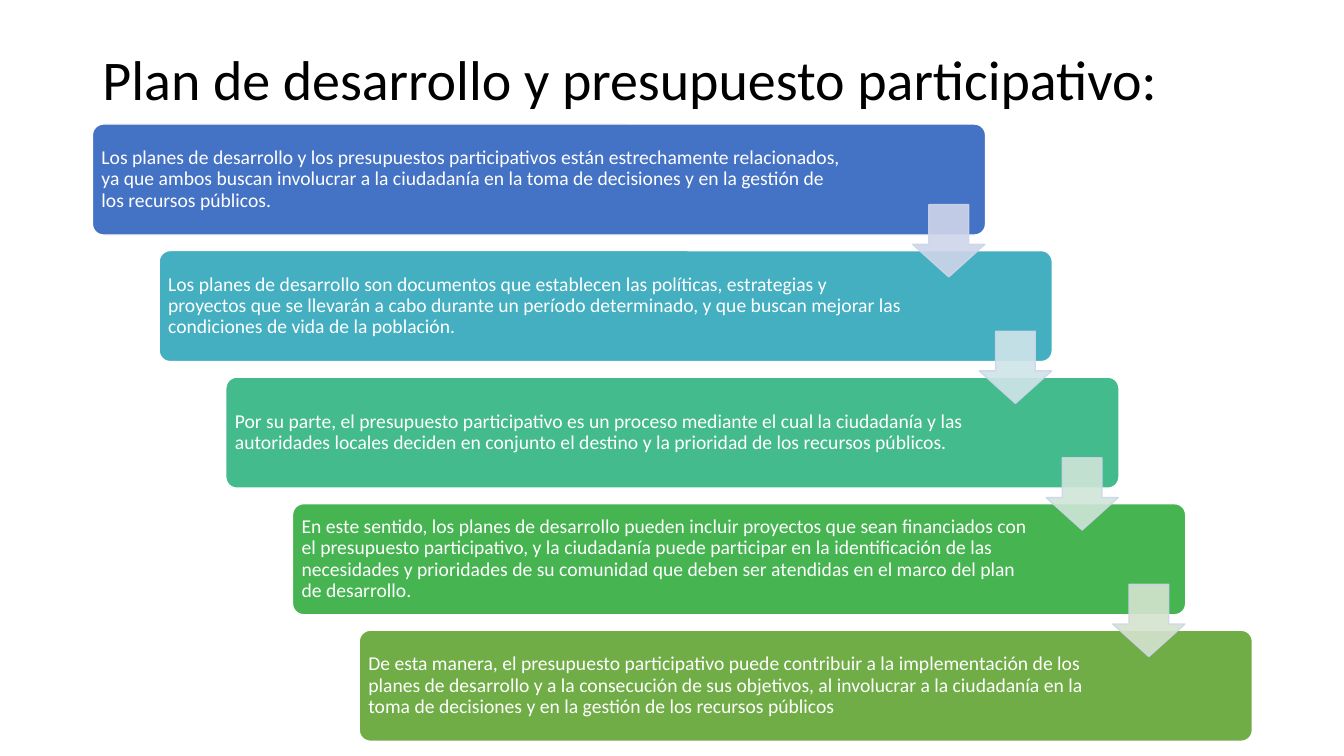
import pptx
import pptx.dml.color
import pptx.enum.shapes
import pptx.enum.text
import pptx.util
import lxml.etree

Pt = pptx.util.Pt
RGBColor = pptx.dml.color.RGBColor
MSO_SHAPE = pptx.enum.shapes.MSO_SHAPE
PP_ALIGN = pptx.enum.text.PP_ALIGN
MSO_ANCHOR = pptx.enum.text.MSO_ANCHOR

FONT = "Calibri"
BLACK = RGBColor(0x00, 0x00, 0x00)
WHITE = RGBColor(0xFF, 0xFF, 0xFF)
ARROW_EDGE = RGBColor(0xCF, 0xD5, 0xEA)

STEP_X, STEP_Y = 47.65, 90.4
STEP_LEFT, STEP_TOP, STEP_WIDTH, STEP_HEIGHT = 66, 88.6, 638, 79.3
ARROW_LEFT, ARROW_TOP, ARROW_SIZE = 651.9, 146.2, 51.6

STEPS = [
    (RGBColor(0x44, 0x72, 0xC4), 95.7,
     "Los planes de desarrollo y los presupuestos participativos están estrechamente relacionados, "
     "ya que ambos buscan involucrar a la ciudadanía en la toma de decisiones y en la gestión de "
     "los recursos públicos."),
    (RGBColor(0x43, 0xAF, 0xC0), 104.3,
     "Los planes de desarrollo son documentos que establecen las políticas, estrategias y "
     "proyectos que se llevarán a cabo durante un período determinado, y que buscan mejorar las "
     "condiciones de vida de la población."),
    (RGBColor(0x43, 0xBB, 0x8D), 104.3,
     "Por su parte, el presupuesto participativo es un proceso mediante el cual la ciudadanía y las "
     "autoridades locales deciden en conjunto el destino y la prioridad de los recursos públicos."),
    (RGBColor(0x45, 0xB4, 0x51), 104.3,
     "En este sentido, los planes de desarrollo pueden incluir proyectos que sean financiados con "
     "el presupuesto participativo, y la ciudadanía puede participar en la identificación de las "
     "necesidades y prioridades de su comunidad que deben ser atendidas en el marco del plan "
     "de desarrollo."),
    (RGBColor(0x70, 0xAD, 0x47), 104.3,
     "De esta manera, el presupuesto participativo puede contribuir a la implementación de los "
     "planes de desarrollo y a la consecución de sus objetivos, al involucrar a la ciudadanía en la "
     "toma de decisiones y en la gestión de los recursos públicos"),
]
ARROW_FILLS = [
    RGBColor(0xCF, 0xD5, 0xEA),
    RGBColor(0xCF, 0xE5, 0xE8),
    RGBColor(0xCF, 0xE5, 0xD8),
    RGBColor(0xD5, 0xE3, 0xCF),
]


def write_text(frame, text, size, color):
    frame.word_wrap = True
    frame.vertical_anchor = MSO_ANCHOR.MIDDLE
    paragraph = frame.paragraphs[0]
    paragraph.alignment = PP_ALIGN.LEFT
    paragraph.line_spacing = 0.9
    run = paragraph.add_run()
    run.text = text
    run.font.name = FONT
    run.font.size = Pt(size)
    run.font.color.rgb = color


def add_title(slide, text):
    title = slide.shapes.title
    title.left, title.top, title.width, title.height = Pt(66), Pt(28.8), Pt(828), Pt(59.8)
    write_text(title.text_frame, text, 40, BLACK)


def add_filled_shape(slide, preset, left, top, width, height, adjustments, fill, edge):
    shape = slide.shapes.add_shape(preset, Pt(left), Pt(top), Pt(width), Pt(height))
    shape.shadow.inherit = False
    for index, value in enumerate(adjustments):
        shape.adjustments[index] = value
    shape.fill.solid()
    shape.fill.fore_color.rgb = fill
    shape.line.color.rgb = edge
    shape.line.width = Pt(1)
    return shape


def add_step(slide, index, fill, right_margin, text):
    step = add_filled_shape(
        slide, MSO_SHAPE.ROUNDED_RECTANGLE,
        STEP_LEFT + index * STEP_X, STEP_TOP + index * STEP_Y,
        STEP_WIDTH, STEP_HEIGHT, [0.1], fill, WHITE)
    frame = step.text_frame
    frame.margin_left = frame.margin_top = frame.margin_bottom = Pt(4.2)
    frame.margin_right = Pt(right_margin)
    write_text(frame, text, 14, WHITE)


def add_arrow(slide, index, fill):
    arrow = add_filled_shape(
        slide, MSO_SHAPE.DOWN_ARROW,
        ARROW_LEFT + index * STEP_X, ARROW_TOP + index * STEP_Y,
        ARROW_SIZE, ARROW_SIZE, [0.55, 0.45], fill, ARROW_EDGE)
    namespace = pptx.oxml.ns.qn
    for color in arrow._element.spPr.iter(namespace("a:srgbClr")):
        lxml.etree.SubElement(color, namespace("a:alpha")).set("val", "90000")


def main():
    deck = pptx.Presentation()
    deck.slide_width, deck.slide_height = Pt(960), Pt(540)
    slide = deck.slides.add_slide(deck.slide_layouts[5])
    add_title(slide, "Plan de desarrollo y presupuesto participativo:")
    for index, (fill, right_margin, text) in enumerate(STEPS):
        add_step(slide, index, fill, right_margin, text)
    for index, fill in enumerate(ARROW_FILLS):
        add_arrow(slide, index, fill)
    deck.save("out.pptx")


if __name__ == "__main__":
    main()
